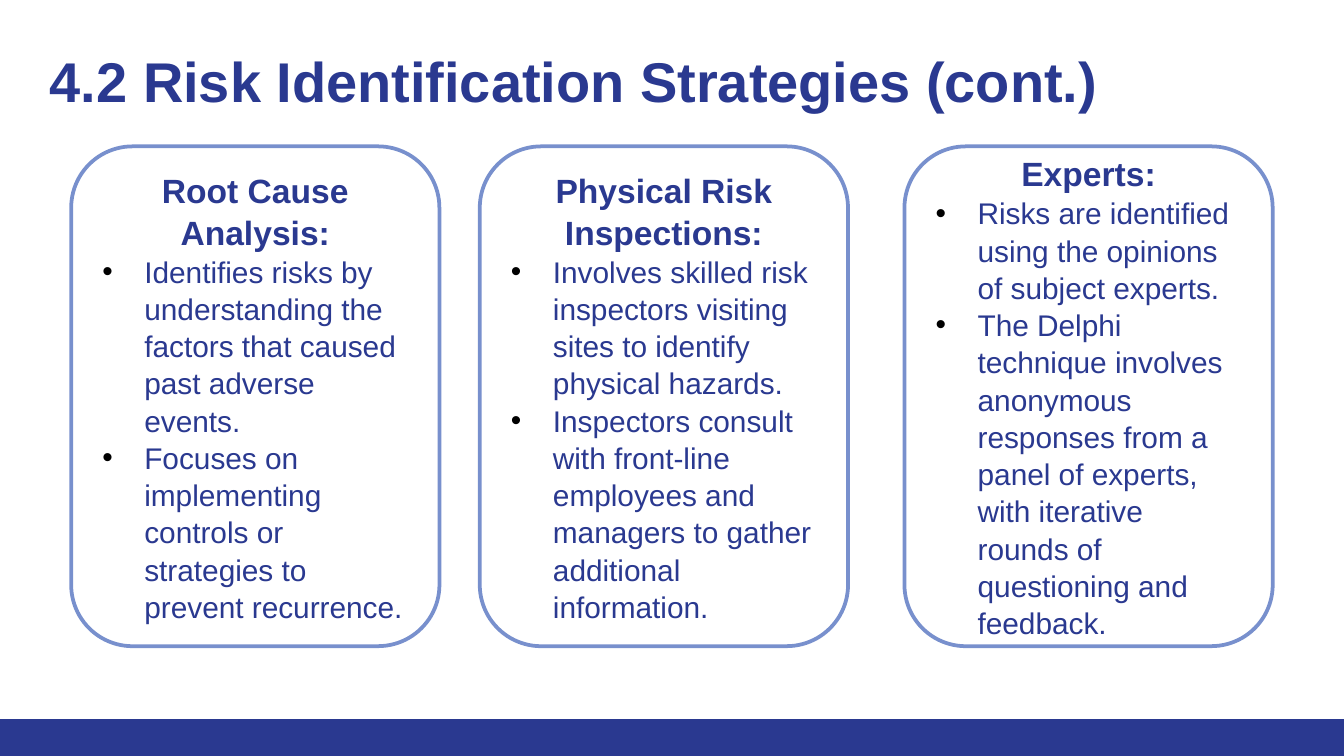
import pptx
import pptx.dml.color
import pptx.enum.shapes
import pptx.enum.text
import pptx.oxml
import pptx.oxml.ns
import pptx.util

Pt = pptx.util.Pt
Shape = pptx.enum.shapes.MSO_SHAPE
Align = pptx.enum.text.PP_ALIGN
Anchor = pptx.enum.text.MSO_ANCHOR

COLORS = {"navy": "2A3990", "edge": "7890CD", "white": "FFFFFF", "dot": "000000"}
LEFTS = (38.16, 257.04, 484.56)
CARDS = (
    ("Root Cause Analysis:", (
        "Identifies risks by understanding the factors that caused past adverse events.",
        "Focuses on implementing controls or strategies to prevent recurrence.")),
    ("Physical Risk Inspections:", (
        "Involves skilled risk inspectors visiting sites to identify physical hazards.",
        "Inspectors consult with front-line employees and managers to gather "
        "additional information.")),
    ("Experts:", (
        "Risks are identified using the opinions of subject experts.",
        "The Delphi technique involves anonymous responses from a panel of experts, "
        "with iterative rounds of questioning and feedback.")),
)


def color(name):
    return pptx.dml.color.RGBColor.from_string(COLORS[name])


def write(par, text, size=16, bold=False, align=Align.LEFT, space=1.04, bullet=False):
    """Fill one paragraph with formatted text."""
    par.alignment = align
    par.line_spacing = space
    if bullet:
        mark(par)
    run = par.add_run()
    run.text = text
    font = run.font
    font.name, font.size, font.bold = "Arial", Pt(size), bold
    font.color.rgb = color("navy")


def mark(par, indent=22.5):
    """Give a paragraph a hanging round bullet."""
    props = par._p.get_or_add_pPr()
    props.set("marL", str(Pt(indent)))
    props.set("indent", str(-Pt(indent)))
    space = pptx.oxml.ns.nsdecls("a")
    for tag in (f'<a:buClr {space}><a:srgbClr val="{COLORS["dot"]}"/></a:buClr>',
                f'<a:buFont {space} typeface="Arial"/>',
                f'<a:buChar {space} char="•"/>'):
        props.append(pptx.oxml.parse_xml(tag))


class Deck:
    """Holds the file, its style and the current slide."""

    def __init__(self):
        self.file = pptx.Presentation()
        self.file.slide_width, self.file.slide_height = Pt(720), Pt(405)
        self.slide = self.file.slides.add_slide(self.file.slide_layouts[5])

    def title(self, text):
        box = self.slide.shapes.title
        box.left, box.top, box.width, box.height = Pt(19.44), Pt(14.4), Pt(662.4), Pt(64)
        frame = box.text_frame
        frame.word_wrap = True
        frame.auto_size = pptx.enum.text.MSO_AUTO_SIZE.NONE
        frame.vertical_anchor = Anchor.TOP
        frame.margin_left = frame.margin_right = frame.margin_bottom = Pt(7.2)
        frame.margin_top = Pt(10.4)
        write(frame.paragraphs[0], text, size=30, bold=True, space=1.0)

    def block(self, kind, left, top, width, height, fill, line=None):
        shape = self.slide.shapes.add_shape(kind, Pt(left), Pt(top), Pt(width), Pt(height))
        shape.shadow.inherit = False
        shape.fill.solid()
        shape.fill.fore_color.rgb = color(fill)
        if line:
            shape.line.color.rgb = color(line)
            shape.line.width = Pt(2)
        else:
            shape.line.fill.background()
        return shape

    def card(self, left, head, points):
        shape = self.block(Shape.ROUNDED_RECTANGLE, left, 78.4, 197.3, 267.8,
                           "white", "edge")
        frame = shape.text_frame
        frame.word_wrap = True
        frame.vertical_anchor = Anchor.MIDDLE
        write(frame.paragraphs[0], head, size=18, bold=True, align=Align.CENTER)
        for point in points:
            write(frame.add_paragraph(), point, bullet=True)


def main():
    deck = Deck()
    deck.block(Shape.RECTANGLE, 0, 385.2, 720, 19.8, "navy")
    deck.title("4.2 Risk Identification Strategies (cont.)")
    for left, (head, points) in zip(LEFTS, CARDS):
        deck.card(left, head, points)
    deck.file.save("out.pptx")


if __name__ == "__main__":
    main()
